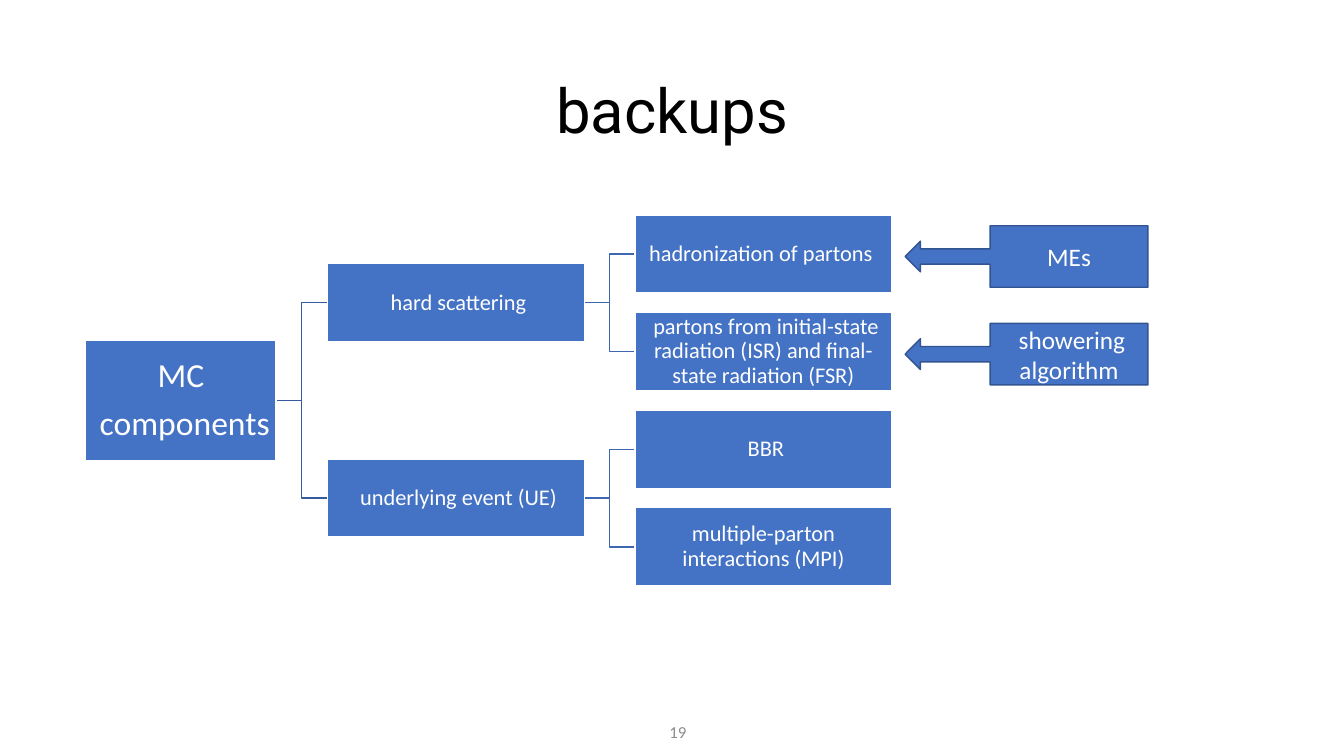
from pptx import Presentation
from pptx.dml.color import RGBColor
from pptx.enum.shapes import MSO_SHAPE
from pptx.enum.text import MSO_ANCHOR, PP_ALIGN
from pptx.util import Cm, Pt

RECT = MSO_SHAPE.RECTANGLE
CALLOUT = MSO_SHAPE.LEFT_ARROW_CALLOUT
MIDDLE = MSO_ANCHOR.MIDDLE
CENTER = PP_ALIGN.CENTER
RIGHT = PP_ALIGN.RIGHT
BLUE = "4472C4"
WHITE = "FFFFFF"


def color(code):
    return RGBColor.from_string(code)


def write(shape, lines, size, ink=WHITE, face="Calibri", inset=None, **form):
    frame = shape.text_frame
    setup = {"word_wrap": True, "vertical_anchor": MIDDLE}
    if inset is not None:
        for side in ("left", "top", "right", "bottom"):
            setup["margin_" + side] = Cm(inset)
    for key, value in setup.items():
        setattr(frame, key, value)
    frame.text = "\n".join(lines)
    for para in frame.paragraphs:
        for key, value in ({"alignment": CENTER} | form).items():
            setattr(para, key, value)
        font = para.runs[0].font
        for key, value in {"name": face, "size": Pt(size)}.items():
            setattr(font, key, value)
        font.color.rgb = color(ink)


deck = Presentation()
deck.slide_width, deck.slide_height = Cm(33.87), Cm(19.05)
slide = deck.slides.add_slide(deck.slide_layouts[5])
shapes = slide.shapes

title = shapes.title
place = {"left": 2.34, "top": 1.02, "width": 29.21, "height": 3.68}
for key, value in place.items():
    setattr(title, key, Cm(value))
write(title, ["backups"], 44, "000000", "Roboto", line_spacing=0.9)

number = shapes.add_textbox(Cm(16.43), Cm(18.06), Cm(0.97), Cm(0.74))
write(number, ["19"], 12, "8C8C8C", inset=0.1, alignment=RIGHT)

START, STEP = 6.4, 1.23
levels = [
    {"left": 2.16, "width": 4.8, "height": 3.02, "size": 24, "inset": 0.05, "line": "365B9D"},
    {"left": 8.25, "width": 6.48, "height": 1.97, "size": 16, "inset": 0.03, "line": "3E67B2"},
    {"left": 16, "width": 6.48, "height": 1.97, "size": 16, "inset": 0.03},
]
nodes = [
    (0, 3, ["MC", " components"], [1, 5]),
    (1, 1, [" hard scattering"], [0, 2]),
    (2, 0, ["hadronization of partons "], []),
    (2, 2, [" partons from initial-state radiation (ISR) and final-state radiation (FSR)"], []),
    (1, 5, [" underlying event (UE)"], [4, 6]),
    (2, 4, [" BBR"], []),
    (2, 6, ["multiple-parton interactions (MPI)"], []),
]

for depth, row, lines, kids in nodes:
    for kid in kids:
        level = levels[depth]
        begin = level["left"] + level["width"]
        end = levels[depth + 1]["left"]
        bend = (begin + end) / 2
        y, goal = START + row * STEP, START + kid * STEP
        path = shapes.build_freeform(Cm(begin), Cm(y))
        points = [(Cm(a), Cm(b)) for a, b in ((bend, y), (bend, goal), (end, goal))]
        path.add_line_segments(points, close=False)
        link = path.convert_to_shape()
        link.shadow.inherit = False
        link.fill.background()
        link.line.color.rgb = color(level["line"])
        link.line.width = Pt(1)

boxes = []
for depth, row, lines, kids in nodes:
    level = levels[depth]
    top = START + row * STEP - level["height"] / 2
    spot = (level["left"], top, level["width"], level["height"])
    size = level["size"]
    form = {"inset": level["inset"], "line_spacing": 0.9, "space_after": Pt(size * 0.35)}
    boxes.append((RECT, spot, WHITE, lines, size, form))
for row, label in enumerate(["MEs", " showering algorithm"]):
    spot = (22.81, 5.69 + row * 2 * STEP, 6.12, 1.55)
    boxes.append((CALLOUT, spot, "325491", [label], 18, {}))

for kind, spot, edge, lines, size, form in boxes:
    box = shapes.add_shape(kind, *map(Cm, spot))
    box.shadow.inherit = False
    box.fill.solid()
    box.fill.fore_color.rgb = color(BLUE)
    box.line.color.rgb = color(edge)
    box.line.width = Pt(1)
    write(box, lines, size, **form)

deck.save("out.pptx")
